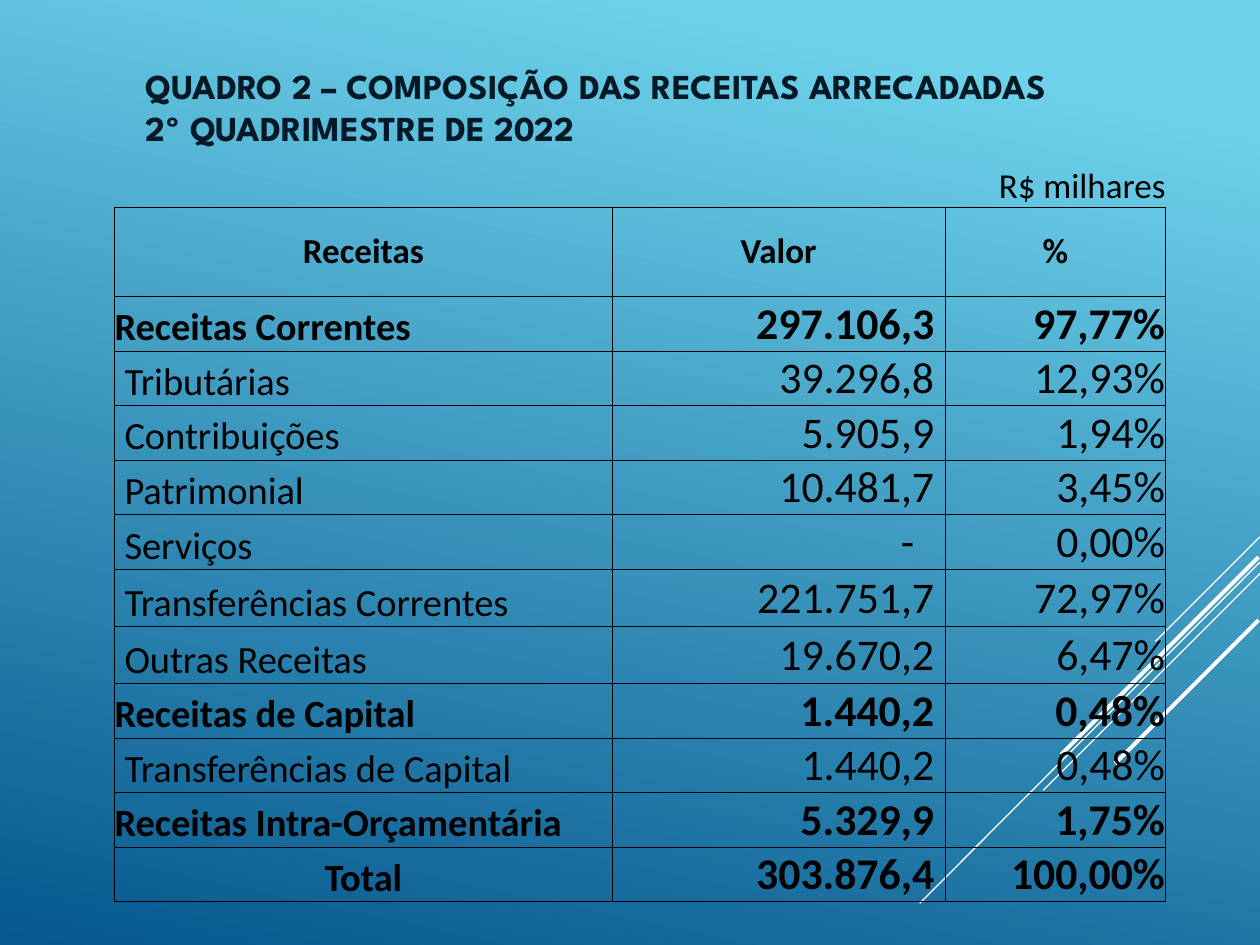
from typing import NamedTuple

from lxml.etree import SubElement
from pptx import Presentation
from pptx.dml.color import RGBColor
from pptx.enum.shapes import MSO_CONNECTOR
from pptx.enum.text import MSO_ANCHOR as Anchor, PP_ALIGN as Align
from pptx.oxml.ns import qn
from pptx.util import Cm, Pt

COLORS = {
    "sky": "6ED2EB",
    "deep": "06588E",
    "title": "051825",
    "text": "000000",
    "border": "000000",
    "ray": "FFFFFF",
}
BODY_FONT = "Calibri"
TITLE_FONT = "League Spartan"
NO_STYLE = "{2D5ABB26-0587-4C30-8999-92F81FD0307C}"
SPACE = 0.2  # gap beside indented labels and values, cm


class Ray(NamedTuple):
    x1: float
    y1: float
    x2: float
    y2: float
    weight: float = 0.75


class Revenue(NamedTuple):
    label: str
    value: str
    share: str
    bold: bool = False
    height: float = 1.1


class CellStyle(NamedTuple):
    size: float
    align: Align = Align.LEFT
    anchor: Anchor = Anchor.MIDDLE
    bold: bool = False
    left: float = 0
    right: float = 0
    inset: float = 0


RAYS = [
    Ray(25.4, 10.82, 21.08, 12.93),
    Ray(25.4, 11.33, 18.54, 18.21),
    Ray(25.4, 11.56, 21.03, 15.93),
    Ray(25.37, 11.23, 21.39, 15.21, 2.25),
    Ray(25.37, 12.5, 22.48, 15.39, 2.25),
]
RAYS[0] = Ray(25.4, 10.82, 23.29, 12.93)

REVENUES = [
    Revenue("Receitas Correntes", "297.106,3", "97,77%", True),
    Revenue("Tributárias", "39.296,8", "12,93%"),
    Revenue("Contribuições", "5.905,9", "1,94%"),
    Revenue("Patrimonial", "10.481,7", "3,45%"),
    Revenue("Serviços", "-", "0,00%"),
    Revenue("Transferências Correntes", "221.751,7", "72,97%", height=1.15),
    Revenue("Outras Receitas", "19.670,2", "6,47%", height=1.15),
    Revenue("Receitas de Capital", "1.440,2", "0,48%", True),
    Revenue("Transferências de Capital", "1.440,2", "0,48%"),
    Revenue("Receitas Intra-Orçamentária", "5.329,9", "1,75%", True),
    Revenue("Total", "303.876,4", "100,00%", True),
]
COLUMN_WIDTHS = [10.03, 2.29, 4.42, 4.45]
ROW_HEIGHTS = [0.84, 1.8] + [revenue.height for revenue in REVENUES]


def color(name: str) -> RGBColor:
    return RGBColor.from_string(COLORS[name])


def paint_background(slide) -> None:
    fill = slide.background.fill
    fill.gradient()
    fill.gradient_angle = 258
    for stop, name, position in zip(fill.gradient_stops, ("sky", "deep"), (0.1, 1)):
        stop.color.rgb = color(name)
        stop.position = position


def add_ray(slide, ray: Ray) -> None:
    line = slide.shapes.add_connector(
        MSO_CONNECTOR.STRAIGHT, Cm(ray.x1), Cm(ray.y1), Cm(ray.x2), Cm(ray.y2)
    )
    line.line.color.rgb = color("ray")
    line.line.width = Pt(ray.weight)
    SubElement(line._element.spPr, qn("a:effectLst"))


def add_title(slide, text: str) -> None:
    box = slide.shapes.add_textbox(Cm(2.69), Cm(1.52), Cm(22.8), Cm(1.27))
    frame = box.text_frame
    frame.word_wrap = True
    frame.vertical_anchor = Anchor.MIDDLE
    paragraph = frame.paragraphs[0]
    paragraph.text = text
    paragraph.line_spacing = Pt(24)
    font = paragraph.font
    font.name, font.size, font.bold = TITLE_FONT, Pt(20), True
    font.color.rgb = color("title")


def set_borders(cell, sides: str) -> None:
    """Draw a thin border on each listed side (L, R, T, B)."""
    properties = cell._tc.get_or_add_tcPr()
    for index, side in enumerate(sides):
        line = properties.makeelement(qn(f"a:ln{side}"), {"w": str(Pt(0.5))})
        fill = SubElement(line, qn("a:solidFill"))
        SubElement(fill, qn("a:srgbClr"), val=COLORS["border"])
        properties.insert(index, line)


def write_cell(cell, text: str, style: CellStyle) -> None:
    cell.margin_left = Cm(style.left + style.inset)
    cell.margin_right = Cm(style.right + style.inset)
    cell.margin_top, cell.margin_bottom = Cm(style.inset), Cm(0)
    cell.vertical_anchor = style.anchor
    paragraph = cell.text_frame.paragraphs[0]
    paragraph.text = text
    paragraph.alignment = style.align
    font = paragraph.font
    font.name, font.size, font.bold = BODY_FONT, Pt(style.size), style.bold
    font.color.rgb = color("text")


def write_revenue(table, row: int, revenue: Revenue) -> None:
    is_total = revenue.label == "Total"
    label = CellStyle(
        22,
        Align.CENTER if is_total else Align.LEFT,
        Anchor.BOTTOM,
        revenue.bold,
        left=0 if revenue.bold else SPACE,
    )
    share = CellStyle(25, Align.RIGHT, bold=revenue.bold, inset=0.02)
    value = share._replace(right=3 * SPACE if revenue.value == "-" else SPACE)
    write_cell(table.cell(row, 0), revenue.label, label)
    write_cell(table.cell(row, 1), revenue.value, value)
    write_cell(table.cell(row, 3), revenue.share, share)


def add_revenue_table(slide) -> None:
    frame = slide.shapes.add_table(
        len(ROW_HEIGHTS), len(COLUMN_WIDTHS), Cm(2.31), Cm(3.33),
        Cm(sum(COLUMN_WIDTHS)), Cm(sum(ROW_HEIGHTS)),
    )
    table = frame.table
    table._tbl.tblPr.find(qn("a:tableStyleId")).text = NO_STYLE
    table.first_row = table.horz_banding = False
    for column, width in zip(table.columns, COLUMN_WIDTHS):
        column.width = Cm(width)
    for index, (row, height) in enumerate(zip(table.rows, ROW_HEIGHTS)):
        row.height = Cm(height)
        for cell in row.cells:
            cell.fill.background()
            set_borders(cell, "LRTB" if index else "B")
        if index:
            table.cell(index, 1).merge(table.cell(index, 2))

    # Unit row, above the grid
    unit = CellStyle(20, Align.RIGHT, Anchor.BOTTOM)
    for column, text in enumerate(["", "", "", "R$ milhares"]):
        write_cell(table.cell(0, column), text, unit)

    # Header and revenue rows
    header = CellStyle(20, Align.CENTER, bold=True)
    for column, text in {0: "Receitas", 1: "Valor", 3: "%"}.items():
        write_cell(table.cell(1, column), text, header)
    for row, revenue in enumerate(REVENUES, start=2):
        write_revenue(table, row, revenue)


def main() -> None:
    presentation = Presentation()
    presentation.slide_width, presentation.slide_height = Cm(25.4), Cm(19.05)
    slide = presentation.slides.add_slide(presentation.slide_layouts[6])
    paint_background(slide)
    for ray in RAYS:
        add_ray(slide, ray)
    add_title(
        slide,
        "QUADRO 2 – COMPOSIÇÃO DAS RECEITAS ARRECADADAS\v2º QUADRIMESTRE DE 2022",
    )
    add_revenue_table(slide)
    presentation.save("out.pptx")


if __name__ == "__main__":
    main()
